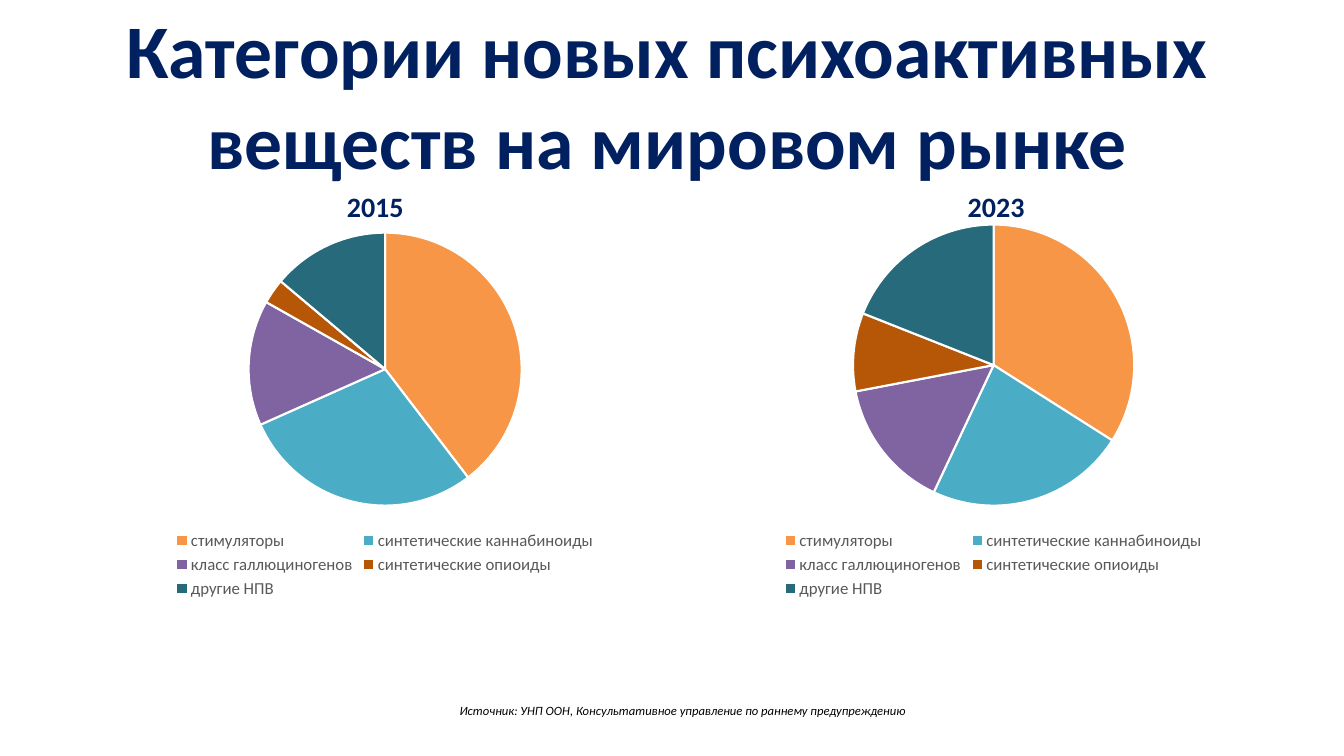
from dataclasses import dataclass

from pptx import Presentation
from pptx.chart.data import CategoryChartData
from pptx.dml.color import RGBColor
from pptx.enum.chart import XL_CHART_TYPE, XL_LEGEND_POSITION
from pptx.enum.text import PP_ALIGN
from pptx.slide import Slide
from pptx.util import Inches, Pt

PIE = XL_CHART_TYPE.PIE
BOTTOM = XL_LEGEND_POSITION.BOTTOM
LEFT, CENTER = PP_ALIGN.LEFT, PP_ALIGN.CENTER

FACE = "Calibri"
NAVY, BLACK, GREY, WHITE = "002060", "000000", "595959", "FFFFFF"
GROUPS = {
    "стимуляторы": "F79646",
    "синтетические каннабиноиды": "4BACC6",
    "класс галлюциногенов": "8064A2",
    "синтетические опиоиды": "B65708",
    "другие НПВ": "276A7C",
}

Box = tuple[float, float, float, float]


@dataclass
class Label:
    text: str
    box: Box
    size: float
    color: str = NAVY
    bold: bool = True
    italic: bool = False
    align: PP_ALIGN = LEFT
    inset: bool = False
    wrap: bool = False


@dataclass
class Pie:
    box: Box
    shares: tuple[int, ...]


LABELS = [
    Label("Категории новых психоактивных веществ на мировом рынке",
          (0.28, 0.03, 12.68, 1.82), 54, align=CENTER, wrap=True),
    Label("2015", (3.44, 1.88, 0.75, 0.29), 20),
    Label("2023", (9.5, 1.83, 0.83, 0.44), 20, inset=True),
    Label("Источник: УНП ООН, Консультативное управление по раннему предупреждению",
          (4.46, 6.92, 5.09, 0.25), 9, BLACK, bold=False, italic=True, inset=True),
]
PIES = [
    Pie((1.02, 2.17, 5.6, 3.81), (40, 29, 15, 3, 14)),
    Pie((7, 2.09, 5.71, 3.89), (34, 23, 15, 9, 19)),
]


def rgb(color: str) -> RGBColor:
    return RGBColor.from_string(color)


def set_font(font, size: float, color: str) -> None:
    font.name = FACE
    font.size = Pt(size)
    font.color.rgb = rgb(color)


def add_label(slide: Slide, label: Label) -> None:
    frame = slide.shapes.add_textbox(*map(Inches, label.box)).text_frame
    frame.word_wrap = label.wrap
    if not label.inset:
        frame.margin_left = frame.margin_right = 0
        frame.margin_top = frame.margin_bottom = 0
    para = frame.paragraphs[0]
    para.alignment = label.align
    run = para.add_run()
    run.text = label.text
    set_font(run.font, label.size, label.color)
    run.font.bold = label.bold
    run.font.italic = label.italic


def add_pie(slide: Slide, pie: Pie) -> None:
    data = CategoryChartData()
    data.categories = list(GROUPS)
    data.add_series("Series 1", pie.shares)
    chart = slide.shapes.add_chart(PIE, *map(Inches, pie.box), data).chart
    set_font(chart.font, 10, BLACK)
    chart.has_title = False

    # Legend under the pie
    chart.has_legend = True
    chart.legend.position = BOTTOM
    chart.legend.include_in_layout = False
    set_font(chart.legend.font, 12, GREY)

    # One colour per group, parted by white lines
    plot = chart.plots[0]
    plot.vary_by_categories = True
    for index, color in enumerate(GROUPS.values()):
        style = plot.series[0].points[index].format
        style.fill.solid()
        style.fill.fore_color.rgb = rgb(color)
        style.line.color.rgb = rgb(WHITE)
        style.line.width = Pt(1.5)


def main() -> None:
    deck = Presentation()
    deck.slide_width, deck.slide_height = Inches(13.33), Inches(7.5)
    slide = deck.slides.add_slide(deck.slide_layouts[6])
    for pie in PIES:
        add_pie(slide, pie)
    for label in LABELS:
        add_label(slide, label)
    deck.save("out.pptx")


if __name__ == "__main__":
    main()
